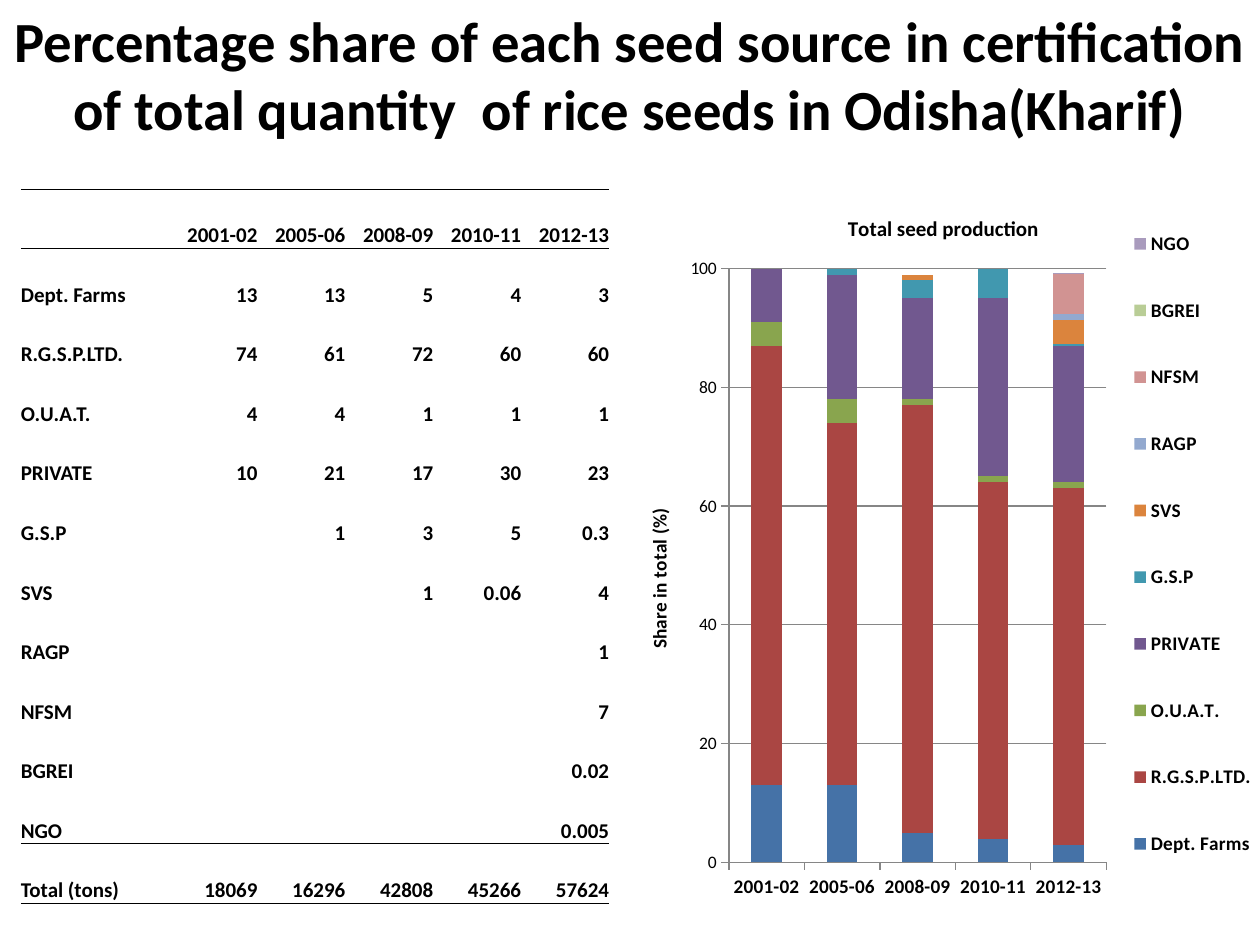
from lxml import etree
from pptx import Presentation
from pptx.chart.data import CategoryChartData
from pptx.dml.color import RGBColor
from pptx.enum.chart import XL_CHART_TYPE as ChartType, XL_LEGEND_POSITION as LegendPosition, XL_TICK_MARK as TickMark
from pptx.enum.text import MSO_ANCHOR as Anchor, PP_ALIGN as Align
from pptx.oxml import parse_xml
from pptx.oxml.ns import nsdecls, qn
from pptx.util import Cm, Pt

FONT = "Calibri"
NO_STYLE = "{2D5ABB26-0587-4C30-8999-92F81FD0307C}"
COLORS = {
    "text": "000000",
    "axis": "868686",
    "Dept. Farms": "4572A7",
    "R.G.S.P.LTD.": "AA4643",
    "O.U.A.T.": "89A54E",
    "PRIVATE": "71588F",
    "G.S.P": "4198AF",
    "SVS": "DB843D",
    "RAGP": "93A9CF",
    "NFSM": "D19392",
    "BGREI": "B9CD96",
    "NGO": "A99BBD",
}
YEARS = ["2001-02", "2005-06", "2008-09", "2010-11", "2012-13"]
SHARES = {
    "Dept. Farms": ["13", "13", "5", "4", "3"],
    "R.G.S.P.LTD.": ["74", "61", "72", "60", "60"],
    "O.U.A.T.": ["4", "4", "1", "1", "1"],
    "PRIVATE": ["10", "21", "17", "30", "23"],
    "G.S.P": ["", "1", "3", "5", "0.3"],
    "SVS": ["", "", "1", "0.06", "4"],
    "RAGP": ["", "", "", "", "1"],
    "NFSM": ["", "", "", "", "7"],
    "BGREI": ["", "", "", "", "0.02"],
    "NGO": ["", "", "", "", "0.005"],
}
TOTALS = ["18069", "16296", "42808", "45266", "57624"]


def color(name):
    """Return the named colour."""
    return RGBColor.from_string(COLORS[name])


def style_font(font, size, bold=True):
    """Give a font the slide's typeface and text colour."""
    font.name = FONT
    font.size = Pt(size)
    font.bold = bold
    font.color.rgb = color("text")


def add_title(slide, left, top, width, height):
    """Fill and place the title placeholder."""
    title = slide.shapes.title
    title.left, title.top, title.width, title.height = left, top, width, height
    frame = title.text_frame
    frame.text = ("Percentage share of each seed source in certification "
                  "of total quantity  of rice seeds in Odisha(Kharif)")
    frame.word_wrap = True
    frame.vertical_anchor = Anchor.MIDDLE
    paragraph = frame.paragraphs[0]
    paragraph.alignment = Align.CENTER
    style_font(paragraph.font, 32.4)


def add_rule(cell, side):
    """Draw a thin line on one side of a cell, lnT or lnB."""
    line = parse_xml(
        f'<a:{side} {nsdecls("a")} w="6350"><a:solidFill>'
        f'<a:srgbClr val="{COLORS["text"]}"/></a:solidFill></a:{side}>')
    properties = cell._tc.get_or_add_tcPr()
    properties.insert(len(properties.findall(qn("a:lnT"))), line)


def format_cell(cell, text, alignment):
    """Write one unfilled table cell without margins."""
    cell.margin_left = cell.margin_right = cell.margin_top = cell.margin_bottom = 0
    cell.vertical_anchor = Anchor.BOTTOM
    cell.fill.background()
    cell.text = text
    paragraph = cell.text_frame.paragraphs[0]
    paragraph.alignment = alignment
    style_font(paragraph.font, 12)


def add_share_table(slide, left, top, width, height):
    """Add the table of shares, ruled around its header and total rows."""
    rows = [["", *YEARS]]
    rows += [[source, *values] for source, values in SHARES.items()]
    rows.append(["Total (tons)", *TOTALS])
    last = len(rows) - 1
    table = slide.shapes.add_table(len(rows), len(rows[0]), left, top, width, height).table
    table.first_row = table.horz_banding = False
    table._tbl.tblPr.find(qn("a:tableStyleId")).text = NO_STYLE
    label_width, first_width = Cm(2.82), Cm(1.95)
    year_width = int((width - label_width - first_width) / (len(YEARS) - 1))
    widths = [label_width, first_width] + [year_width] * (len(YEARS) - 1)
    for column, column_width in zip(table.columns, widths):
        column.width = column_width
    for row_index, row in enumerate(rows):
        table.rows[row_index].height = int(height / len(rows))
        for column_index, text in enumerate(row):
            cell = table.cell(row_index, column_index)
            format_cell(cell, text, Align.RIGHT if column_index else Align.LEFT)
            if row_index == 0:
                add_rule(cell, "lnT")
            if row_index in (0, last - 1, last):
                add_rule(cell, "lnB")


def set_layout(element, index, **fractions):
    """Place a chart part by fractions of the chart's size."""
    for old in element.findall(qn("c:layout")):
        element.remove(old)
    layout = parse_xml(f'<c:layout {nsdecls("c")}><c:manualLayout/></c:layout>')
    manual = layout[0]
    if "w" in fractions and index == 0:
        etree.SubElement(manual, qn("c:layoutTarget")).set("val", "inner")
    for name in ("x", "y"):
        etree.SubElement(manual, qn(f"c:{name}Mode")).set("val", "edge")
    for name, value in fractions.items():
        etree.SubElement(manual, qn(f"c:{name}")).set("val", str(value))
    element.insert(index, layout)


def set_heading(heading, text, size):
    """Write a chart or axis title."""
    heading.text_frame.text = text
    style_font(heading.text_frame.paragraphs[0].font, size)


def format_axes(chart):
    """Set scale, ticks, gridlines and lettering of both axes."""
    category_axis, value_axis = chart.category_axis, chart.value_axis
    for axis in (category_axis, value_axis):
        axis.major_tick_mark = TickMark.OUTSIDE
        axis.format.line.color.rgb = color("axis")
    style_font(category_axis.tick_labels.font, 11)
    style_font(value_axis.tick_labels.font, 10, bold=False)
    value_axis.minimum_scale, value_axis.maximum_scale = 0, 100
    value_axis.major_unit = 20
    value_axis.major_gridlines.format.line.color.rgb = color("axis")
    value_axis.tick_labels.number_format = "0"
    value_axis.tick_labels.number_format_is_linked = False
    set_heading(value_axis.axis_title, "Share in total (%)", 11)


def add_share_chart(slide, left, top, width, height):
    """Add the stacked columns of each source's share by year."""
    data = CategoryChartData(number_format="General")
    data.categories = YEARS
    for source, values in SHARES.items():
        data.add_series(source, [float(value) if value else None for value in values])
    chart = slide.shapes.add_chart(ChartType.COLUMN_STACKED, left, top, width, height, data).chart
    style_font(chart.font, 10, bold=False)
    set_heading(chart.chart_title, "Total seed production", 12)
    format_axes(chart)
    plot = chart.plots[0]
    plot.gap_width, plot.overlap = 150, 100
    plot.vary_by_categories = False
    for series in plot.series:
        series.format.fill.solid()
        series.format.fill.fore_color.rgb = color(series.name)
    chart.has_legend = True
    chart.legend.position = LegendPosition.RIGHT
    chart.legend.include_in_layout = False
    style_font(chart.legend.font, 11)
    chart_element = chart._chartSpace.chart
    set_layout(chart_element.plotArea, 0, x=0.17, y=0.11, w=0.59, h=0.82)
    set_layout(chart_element.find(qn("c:title")), 1, x=0.35, y=0.03)
    set_layout(chart_element.find(qn("c:legend")), 1, x=0.79, y=0, w=0.21, h=0.98)


def main():
    """Build and save the slide."""
    presentation = Presentation()
    presentation.slide_width, presentation.slide_height = Cm(25.4), Cm(19.05)
    slide = presentation.slides.add_slide(presentation.slide_layouts[5])
    add_title(slide, 0, 0, presentation.slide_width, Cm(2.97))
    add_share_table(slide, Cm(0.42), Cm(3.81), Cm(11.86), Cm(14.4))
    add_share_chart(slide, Cm(12.5), Cm(3.81), Cm(12.9), Cm(14.6))
    presentation.save("out.pptx")


if __name__ == "__main__":
    main()
